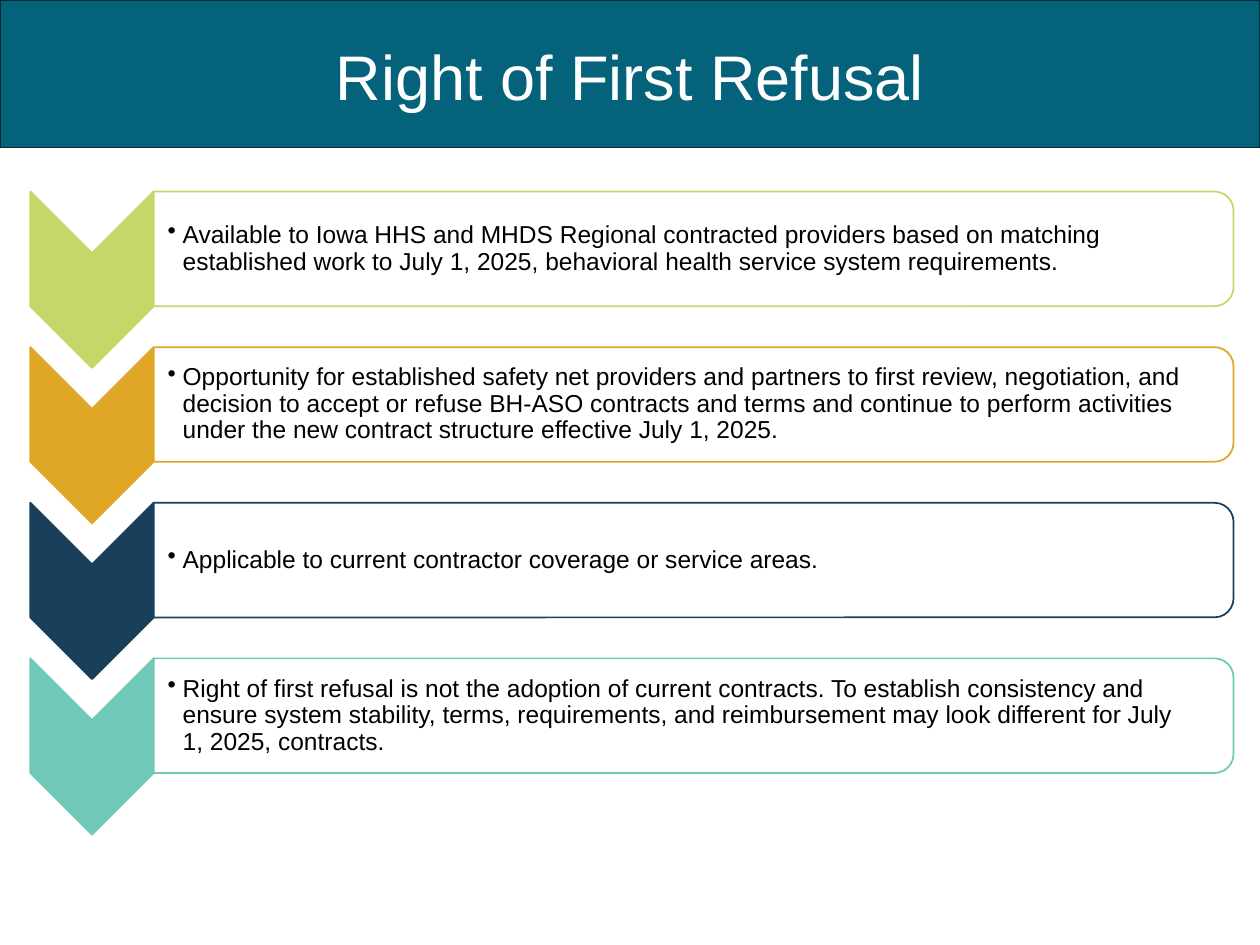
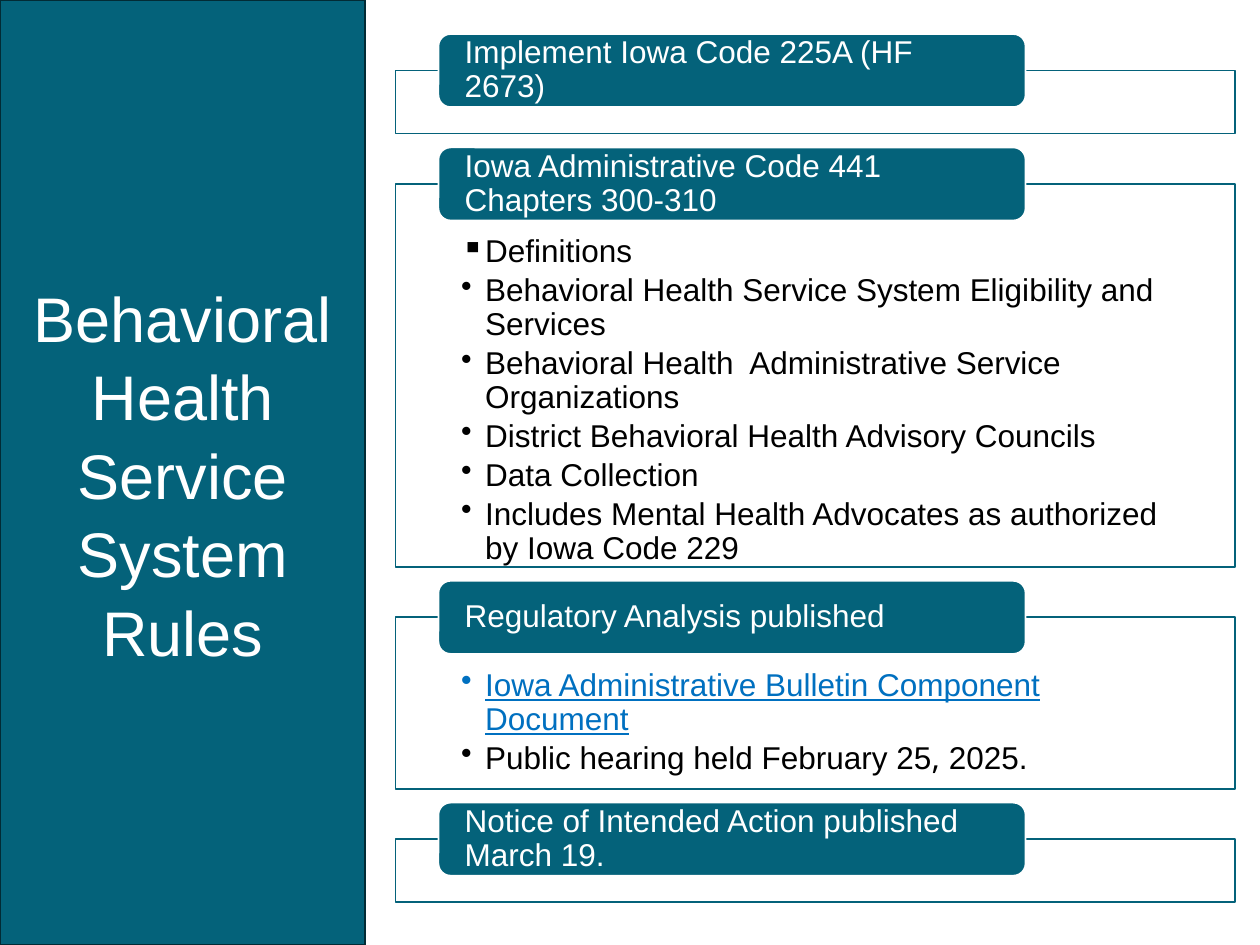
from dataclasses import dataclass

from lxml.etree import SubElement
from pptx import Presentation
from pptx.dml.color import RGBColor
from pptx.enum.shapes import MSO_SHAPE as Shape
from pptx.enum.text import MSO_ANCHOR as Anchor, MSO_AUTO_SIZE as AutoSize, PP_ALIGN as Align
from pptx.oxml.ns import qn
from pptx.util import Emu, Inches, Pt

WIDTH, HEIGHT = 10, 7.5

REFUSAL_TITLE = "Right of First Refusal"
REFUSAL_POINTS = [
    ("C6D668", "Available to Iowa HHS and MHDS Regional contracted providers based on matching "
               "established work to July 1, 2025, behavioral health service system requirements."),
    ("E0A626", "Opportunity for established safety net providers and partners to first review, "
               "negotiation, and decision to accept or refuse BH-ASO contracts and terms and "
               "continue to perform activities under the new contract structure effective "
               "July 1, 2025."),
    ("18405B", "Applicable to current contractor coverage or service areas."),
    ("70C8B8", "Right of first refusal is not the adoption of current contracts. To establish "
               "consistency and ensure system stability, terms, requirements, and reimbursement "
               "may look different for July 1, 2025, contracts."),
]

RULES_TITLE = "Behavioral Health Service System Rules"
# heading, panel height, list of (bullet, runs); a run is (text, format changes)
RULES_STEPS = [
    ("Implement Iowa Code 225A (HF 2673)", 0.5, []),
    ("Iowa Administrative Code 441 Chapters 300-310", 3.04, [
        ("▪", [("Definitions", {})]),
        ("•", [("Behavioral Health Service System Eligibility and Services", {})]),
        ("•", [("Behavioral Health  Administrative Service Organizations", {})]),
        ("•", [("District Behavioral Health Advisory Councils", {})]),
        ("•", [("Data Collection", {})]),
        ("•", [("Includes Mental Health Advocates as authorized by Iowa Code 229", {})]),
    ]),
    ("Regulatory Analysis published", 1.36, [
        ("•", [("Iowa Administrative Bulletin Component Document",
                {"color": "0070C0", "underline": True})]),
        ("•", [("Public hearing held February 25", {}), (",", {"font": "Noto Sans"}),
               (" 2025.", {})]),
    ]),
    ("Notice of Intended Action published March 19.", 0.5, []),
]


@dataclass(frozen=True)
class Theme:
    teal: str = "04627A"
    band_edge: str = "022B35"
    white: str = "FFFFFF"
    black: str = "000000"
    font: str = "Arial"
    title_size: int = 36
    step_size: int = 18
    point_size: int = 14


THEME = Theme()


def rgb(color):
    return RGBColor.from_string(color)


def write(shape, paragraphs, size, color=THEME.black, align=Align.LEFT, anchor=Anchor.MIDDLE,
          insets=(0.1, 0.05, 0.1, 0.05), spacing=0.9, after=0, indent=0):
    """Fill a shape with (bullet, runs) paragraphs; a bullet of None means plain text."""
    frame = shape.text_frame
    frame.word_wrap = True
    frame.auto_size = AutoSize.NONE
    frame.vertical_anchor = anchor
    (frame.margin_left, frame.margin_top,
     frame.margin_right, frame.margin_bottom) = map(Inches, insets)
    for index, (bullet, runs) in enumerate(paragraphs):
        paragraph = frame.add_paragraph() if index else frame.paragraphs[0]
        paragraph.alignment = align
        paragraph.line_spacing = spacing
        paragraph.space_before = Pt(0)
        paragraph.space_after = Pt(after)
        if bullet:
            properties = paragraph._p.get_or_add_pPr()
            properties.set("marL", str(Inches(indent)))
            properties.set("indent", str(-Inches(indent)))
            SubElement(properties, qn("a:buChar")).set("char", bullet)
        for text, changes in runs:
            run = paragraph.add_run()
            run.text = text
            run.font.size = Pt(size)
            run.font.name = changes.get("font", THEME.font)
            run.font.color.rgb = rgb(changes.get("color", color))
            if changes.get("underline"):
                run.font.underline = True


def plain(text):
    return [(None, [(text, {})])]


def paint(shape, fill, line):
    shape.fill.solid()
    shape.fill.fore_color.rgb = rgb(fill)
    shape.line.color.rgb = rgb(line)
    shape.line.width = Pt(1)


def add_box(slide, kind, left, top, width, height, fill, line, upright=True):
    """Add a preset shape covering the given area, turned by 90 degrees if not upright."""
    x, y, w, h = map(Inches, (left, top, width, height))
    if not upright:
        x, y, w, h = x + (w - h) // 2, y + (h - w) // 2, h, w
    box = slide.shapes.add_shape(kind, Emu(x), Emu(y), w, h)
    box.rotation = 0 if upright else 90
    box.shadow.inherit = False
    paint(box, fill, line)
    return box


def add_titled_slide(deck, title, width, height):
    slide = deck.slides.add_slide(deck.slide_layouts[5])
    band = slide.shapes.title
    band.left, band.top, band.width, band.height = 0, 0, Inches(width), Inches(height)
    paint(band, THEME.teal, THEME.band_edge)
    write(band, plain(title), THEME.title_size, color=THEME.white, align=Align.CENTER,
          spacing=1.04)
    return slide


def build_refusal(deck):
    slide = add_titled_slide(deck, REFUSAL_TITLE, WIDTH, 1.17)
    left, first_top, pitch = 0.24, 1.52, 1.235
    chevron_width, chevron_height = 0.98, 1.4
    bar_left, bar_width, bar_height = left + chevron_width, 8.57, 0.91
    for row, (color, point) in enumerate(REFUSAL_POINTS):
        top = first_top + row * pitch
        add_box(slide, Shape.CHEVRON, left, top, chevron_width, chevron_height,
                color, color, upright=False)
        add_box(slide, Shape.ROUND_2_SAME_RECTANGLE, bar_left, top, bar_width, bar_height,
                THEME.white, color, upright=False)
        caption = slide.shapes.add_textbox(*map(Inches, (bar_left, top, bar_width, bar_height)))
        write(caption, [("•", [(point, {})])], THEME.point_size,
              insets=(0.11, 0.01, 0.3, 0.01), indent=0.12)


def build_rules(deck):
    slide = add_titled_slide(deck, RULES_TITLE, 2.9, HEIGHT)
    panel_left, panel_width, gap = 3.14, 6.66, 0.4
    pill_left, pill_width, pill_height = 3.48, 4.66, 0.58
    top = 0.56
    for heading, height, items in RULES_STEPS:
        panel = add_box(slide, Shape.RECTANGLE, panel_left, top, panel_width, height,
                        THEME.white, THEME.teal)
        if items:
            write(panel, items, THEME.step_size, anchor=Anchor.TOP,
                  insets=(0.52, 0.41, 0.52, 0.14), after=2.8, indent=0.19)
        pill = add_box(slide, Shape.ROUNDED_RECTANGLE, pill_left, top - pill_height / 2,
                       pill_width, pill_height, THEME.teal, THEME.white)
        write(pill, plain(heading), THEME.step_size, color=THEME.white,
              insets=(0.18, 0, 0.18, 0))
        top += height + gap


def main():
    deck = Presentation()
    deck.slide_width, deck.slide_height = Inches(WIDTH), Inches(HEIGHT)
    build_refusal(deck)
    build_rules(deck)
    deck.save("out.pptx")


if __name__ == "__main__":
    main()
